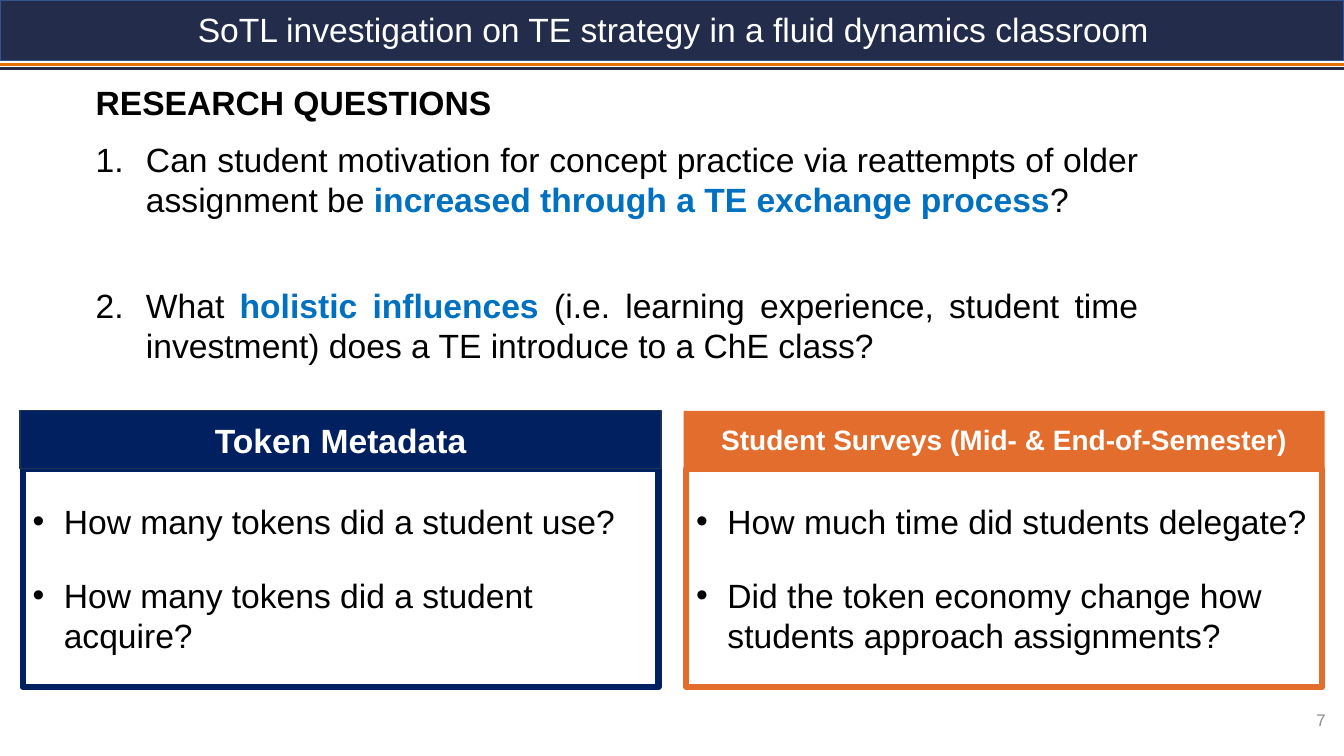
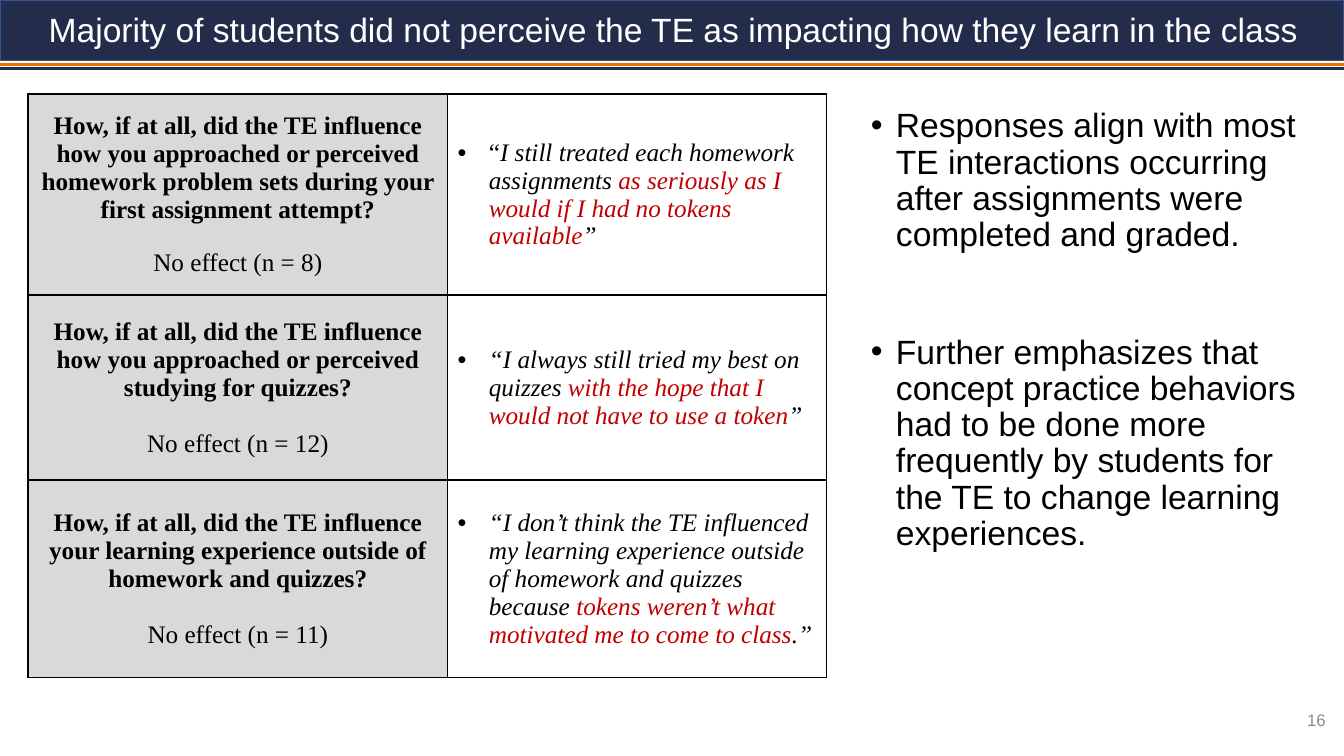
import dataclasses
import typing

import lxml.etree
import pptx
import pptx.dml.color
import pptx.enum.shapes
import pptx.enum.text
import pptx.oxml.ns
import pptx.shapes.autoshape
import pptx.slide
import pptx.table
import pptx.text.text
import pptx.util

ALIGN = pptx.enum.text.PP_ALIGN
MIDDLE = pptx.enum.text.MSO_ANCHOR.MIDDLE
SANS, SERIF = "Arial", "Times New Roman"
BLACK, WHITE, GRAY, LIGHT_GRAY = "000000", "FFFFFF", "8C8C8C", "D9D9D9"
BAND, BAND_EDGE, RULE = "232D4B", "325491", "E57200"
NAVY, NAVY_EDGE, ORANGE = "002060", "1E3256", "E36D2D"
BLUE, RED = "0070C0", "C00000"

SLIDE_WIDTH = pptx.util.Inches(13.33)
SLIDE_HEIGHT = pptx.util.Inches(7.5)
COLUMNS, ROWS = 160, 90


@dataclasses.dataclass(frozen=True)
class Area:
    column: float
    row: float
    columns: float
    rows: float

    def lengths(self) -> tuple[int, int, int, int]:
        return across(self.column), down(self.row), across(self.columns), down(self.rows)


@dataclasses.dataclass(frozen=True)
class Span:
    text: str
    size: float = 24
    font: str = SANS
    color: str = BLACK
    bold: bool = False
    italic: bool = False


@dataclasses.dataclass(frozen=True)
class Para:
    spans: tuple[Span, ...]
    align: typing.Any = ALIGN.LEFT
    before: float = 0
    after: float = 0
    line: float = 1
    indent: float = 0
    bullet: bool = False
    number: int = 0


@dataclasses.dataclass(frozen=True)
class Card:
    column: float
    color: str
    edge: str
    heading: Span
    points: tuple[str, str]


@dataclasses.dataclass(frozen=True)
class Response:
    rows: float
    question: str
    count: int
    gap: float
    quote: tuple[Span, ...]


def across(columns: float) -> int:
    return round(SLIDE_WIDTH * columns / COLUMNS)


def down(rows: float) -> int:
    return round(SLIDE_HEIGHT * rows / ROWS)


def rgb(value: str) -> pptx.dml.color.RGBColor:
    return pptx.dml.color.RGBColor.from_string(value)


def child(parent: typing.Any, tag: str, **attributes: str) -> typing.Any:
    return lxml.etree.SubElement(parent, pptx.oxml.ns.qn(tag), attributes)


def write(frame: pptx.text.text.TextFrame, paras: typing.Sequence[Para]) -> None:
    frame.word_wrap = True
    for index, para in enumerate(paras):
        paragraph = frame.add_paragraph() if index else frame.paragraphs[0]
        paragraph.alignment = para.align
        paragraph.line_spacing = para.line
        paragraph.space_before = pptx.util.Pt(para.before)
        paragraph.space_after = pptx.util.Pt(para.after)
        properties = paragraph._p.get_or_add_pPr()
        if para.indent:
            indent = pptx.util.Inches(para.indent)
            properties.set("marL", str(indent))
            properties.set("indent", str(-indent))
        if para.bullet:
            child(properties, "a:buFont", typeface=SANS)
            child(properties, "a:buChar", char="•")
        elif para.number:
            child(properties, "a:buFont", typeface=SANS)
            child(properties, "a:buAutoNum", type="arabicPeriod", startAt=str(para.number))
        for span in para.spans:
            run = paragraph.add_run()
            run.text = span.text
            run.font.size = pptx.util.Pt(span.size)
            run.font.name = span.font
            run.font.color.rgb = rgb(span.color)
            run.font.bold = span.bold
            run.font.italic = span.italic


def add_text(page: pptx.slide.Slide, area: Area, *paras: Para, middle: bool = False) -> None:
    box = page.shapes.add_textbox(*area.lengths())
    if middle:
        box.text_frame.vertical_anchor = MIDDLE
    write(box.text_frame, paras)


def add_rectangle(
    page: pptx.slide.Slide, area: Area, fill: str, edge: str, weight: float, *paras: Para
) -> None:
    box = page.shapes.add_shape(
        pptx.enum.shapes.MSO_SHAPE.RECTANGLE, *area.lengths()
    )
    box.shadow.inherit = False
    if fill:
        box.fill.solid()
        box.fill.fore_color.rgb = rgb(fill)
    else:
        box.fill.background()
    if edge:
        box.line.color.rgb = rgb(edge)
        box.line.width = pptx.util.Pt(weight)
    else:
        box.line.fill.background()
    box.text_frame.vertical_anchor = MIDDLE
    if paras:
        write(box.text_frame, paras)


def add_rule(page: pptx.slide.Slide, row: float, color: str) -> None:
    rule = page.shapes.add_connector(
        pptx.enum.shapes.MSO_CONNECTOR.STRAIGHT, 0, down(row), SLIDE_WIDTH, down(row)
    )
    rule.line.color.rgb = rgb(color)
    rule.line.width = pptx.util.Pt(2)
    child(rule._element.spPr, "a:effectLst")


def add_page(deck: typing.Any, title: str, number: int) -> pptx.slide.Slide:
    page = deck.slides.add_slide(deck.slide_layouts[6])
    add_rectangle(page, Area(0, 0, COLUMNS, 7.2), BAND, BAND_EDGE, 1)
    add_rule(page, 8.16, BAND)
    add_rule(page, 7.68, RULE)
    add_text(
        page, Area(2.64, 0.96, 155, 6.1),
        Para((Span(title, color=WHITE),), ALIGN.CENTER, line=0.9),
    )
    add_text(
        page, Area(146.16, 83.28, 12.84, 4.8),
        Para((Span(str(number), 12, color=GRAY),), ALIGN.RIGHT), middle=True,
    )
    return page


def add_card(page: pptx.slide.Slide, card: Card) -> None:
    top, width, heading_rows, inset = 48.9, 76.3, 6.9, 0.3
    points = [
        Para((Span(point),), before=24 if index else 0, indent=0.31, bullet=True)
        for index, point in enumerate(card.points)
    ]
    add_rectangle(
        page, Area(card.column + inset, top + heading_rows, width - 2 * inset, 26),
        "", card.color, 4.5, *points,
    )
    add_rectangle(
        page, Area(card.column, top, width, heading_rows), card.color, card.edge, 1,
        Para((card.heading,), ALIGN.CENTER),
    )


def fill_cell(cell: pptx.table._Cell, fill: str, paras: typing.Sequence[Para]) -> None:
    properties = cell._tc.get_or_add_tcPr()
    for side in ("L", "R", "T", "B"):
        border = child(properties, f"a:ln{side}", w=str(pptx.util.Pt(1.5)))
        child(child(border, "a:solidFill"), "a:srgbClr", val=BLACK)
    cell.fill.solid()
    cell.fill.fore_color.rgb = rgb(fill)
    cell.vertical_anchor = MIDDLE
    write(cell.text_frame, paras)


def add_responses(page: pptx.slide.Slide, responses: typing.Sequence[Response]) -> None:
    widths = (49.92, 45.12)
    area = Area(3.36, 11.16, sum(widths), sum(response.rows for response in responses))
    table = page.shapes.add_table(len(responses), len(widths), *area.lengths()).table
    table.first_row = False
    table.horz_banding = False
    for column, width in zip(table.columns, widths):
        column.width = across(width)
    for index, response in enumerate(responses):
        table.rows[index].height = down(response.rows)
        question = Para((Span(response.question, 18, SERIF, bold=True),), ALIGN.CENTER)
        effect = Para(
            (Span(f"No effect (n = {response.count})", 18, SERIF),),
            ALIGN.CENTER, before=response.gap,
        )
        quote = Para(response.quote, indent=0.31, bullet=True)
        fill_cell(table.cell(index, 0), LIGHT_GRAY, (question, effect))
        fill_cell(table.cell(index, 1), WHITE, (quote,))


def quoted(text: str, color: str = BLACK, italic: bool = True) -> Span:
    return Span(text, 18, SERIF, color, italic=italic)


def add_questions_page(deck: typing.Any) -> None:
    page = add_page(deck, "SoTL investigation on TE strategy in a fluid dynamics classroom", 7)
    motivation = (
        Span("Can student motivation for concept practice via reattempts of older assignment be "),
        Span("increased through a TE exchange process", color=BLUE, bold=True),
        Span("?"),
    )
    influences = (
        Span("What "),
        Span("holistic influences ", color=BLUE, bold=True),
        Span("(i.e. learning experience, student time investment) "
             "does a TE introduce to a ChE class?"),
    )
    add_text(
        page, Area(10.2, 9.12, 126.48, 36.36),
        Para((Span("RESEARCH QUESTIONS", bold=True),), ALIGN.JUSTIFY, after=12),
        Para(motivation, ALIGN.JUSTIFY, after=6, indent=0.5, number=1),
        Para(influences, ALIGN.JUSTIFY, before=41, indent=0.5, number=2),
    )
    cards = (
        Card(2.4, NAVY, NAVY_EDGE, Span("Token Metadata", color=WHITE, bold=True),
             ("How many tokens did a student use?",
              "How many tokens did a student acquire?")),
        Card(81.4, ORANGE, "",
             Span("Student Surveys (Mid- & End-of-Semester)", 20, color=WHITE, bold=True),
             ("How much time did students delegate?",
              "Did the token economy change how students approach assignments?")),
    )
    for card in cards:
        add_card(page, card)


def add_perception_page(deck: typing.Any) -> None:
    page = add_page(
        deck,
        "Majority of students did not perceive the TE as impacting how they learn in the class",
        16,
    )
    findings = (
        "Responses align with most TE interactions occurring after assignments "
        "were completed and graded.",
        "Further emphasizes that concept practice behaviors had to be done more frequently "
        "by students for the TE to change learning experiences.",
    )
    add_text(page, Area(102.48, 12.36, 54.12, 59.4), *(
        Para((Span(finding),), before=58 if index else 0, line=0.9, indent=0.25, bullet=True)
        for index, finding in enumerate(findings)
    ))
    stem = "How, if at all, did the TE influence "
    add_responses(page, (
        Response(24, stem + "how you approached or perceived homework problem sets "
                 "during your first assignment attempt?", 8, 18, (
                     quoted("“", italic=False),
                     quoted("I still treated each homework assignments "),
                     quoted("as seriously as I would if I had no tokens available", RED),
                     quoted("”"))),
        Response(22, stem + "how you approached or perceived studying for quizzes?", 12, 20, (
            quoted("“I always still tried my best on quizzes "),
            quoted("with the hope that I would not have to use a token", RED),
            quoted("”"))),
        Response(23.5, stem + "your learning experience outside of homework and quizzes?", 11, 20, (
            quoted("“I don’t think the TE influenced my learning experience "
                   "outside of homework and quizzes because "),
            quoted("tokens weren’t what motivated me to come to class", RED),
            quoted(".”"))),
    ))


def main() -> None:
    deck = pptx.Presentation()
    deck.slide_width = SLIDE_WIDTH
    deck.slide_height = SLIDE_HEIGHT
    add_questions_page(deck)
    add_perception_page(deck)
    deck.save("out.pptx")


if __name__ == "__main__":
    main()
